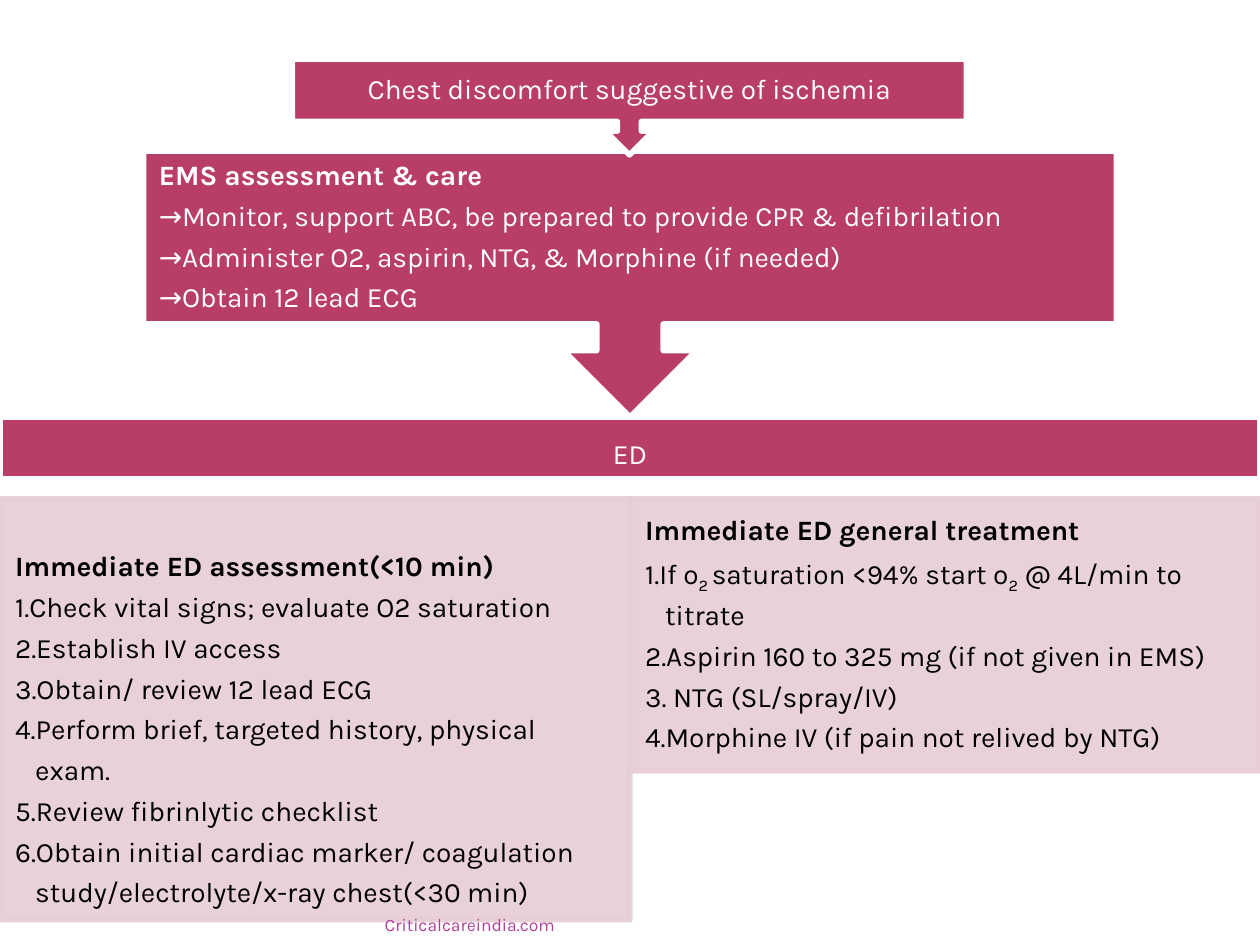
from lxml import etree
from pptx import Presentation
from pptx.dml.color import RGBColor
from pptx.enum.shapes import MSO_SHAPE
from pptx.enum.text import MSO_ANCHOR, PP_ALIGN
from pptx.oxml.ns import qn
from pptx.util import Inches, Pt

RECT = MSO_SHAPE.RECTANGLE
CALLOUT = MSO_SHAPE.UP_ARROW_CALLOUT
MIDDLE, BOTTOM = MSO_ANCHOR.MIDDLE, MSO_ANCHOR.BOTTOM
LEFT, CENTER, RIGHT = PP_ALIGN.LEFT, PP_ALIGN.CENTER, PP_ALIGN.RIGHT

ROSE, BLUSH, WHITE, BLACK, PLUM = "B83D68", "E6CED4", "FFFFFF", "000000", "B13F9A"


def paint(form, tone, clear=None):
    form.solid()
    form.fore_color.rgb = RGBColor.from_string(tone)
    if clear:
        color = form._xPr.find(qn("a:solidFill"))[0]
        etree.SubElement(color, qn("a:alpha"), val=str(clear * 1000))


class Deck:
    font = "Karla"
    size = 16

    def __init__(self, wide, high):
        self.file = Presentation()
        self.file.slide_width = Inches(wide)
        self.file.slide_height = Inches(high)
        self.slide = self.file.slides.add_slide(self.file.slide_layouts[6])

    def place(self, area):
        wide, high = self.file.slide_width, self.file.slide_height
        return [int(part * side / 100) for part, side in zip(area, (wide, high) * 2)]

    def block(self, area, kind=RECT, tone=ROSE, edge=WHITE, clear=None):
        shape = self.slide.shapes.add_shape(kind, *self.place(area))
        shape.shadow.inherit = False
        paint(shape.fill, tone, clear)
        paint(shape.line.fill, edge, clear)
        shape.line.width = Pt(3.15)
        if kind == CALLOUT:
            shape.rotation = 180

    def text(self, area, lines, tone, align=LEFT, inset=(0.12, 0.02, 0.12, 0.02),
             anchor=MIDDLE, size=size, line=0.9, after=6):
        frame = self.slide.shapes.add_textbox(*self.place(area)).text_frame
        frame.word_wrap = True
        frame.vertical_anchor = anchor
        (frame.margin_left, frame.margin_top,
         frame.margin_right, frame.margin_bottom) = map(Inches, inset)
        for rank, runs in enumerate(lines):
            para = frame.add_paragraph() if rank else frame.paragraphs[0]
            para.alignment = align
            para.line_spacing = line
            para.space_after = Pt(after if rank < len(lines) - 1 else 0)
            for words, style in [(runs, "")] if isinstance(runs, str) else runs:
                self.run(para, words, style, tone, size)

    def run(self, para, words, style, tone, size):
        run = para.add_run()
        run.text = words
        run.font.name = self.font
        run.font.size = Pt(size)
        run.font.bold = style == "bold"
        run.font.color.rgb = RGBColor.from_string(tone)
        if style == "sub":
            run.font._element.set("baseline", "-25000")
        if style == "hang":
            para._p.get_or_add_pPr().set("marL", str(Inches(0.16)))


def main():
    deck = Deck(10, 7.5)

    deck.block((0, 44.13, 100, 6.53))
    deck.text((0, 44.13, 100, 6.53), ["ED"], WHITE, CENTER, (0.12, 0.12, 0.12, 0))

    assess = [
        [("Immediate ED assessment(<10 min)", "bold")],
        "1.Check vital signs; evaluate O2 saturation",
        "2.Establish IV access",
        "3.Obtain/ review 12 lead ECG",
        "4.Perform brief, targeted history, physical",
        [("exam.", "hang")],
        "5.Review fibrinlytic checklist",
        "6.Obtain initial cardiac marker/ coagulation",
        [("study/electrolyte/x-ray chest(<30 min)", "hang")],
    ]
    treat = [
        [("Immediate ED general treatment", "bold")],
        [("1.If o", ""), ("2 ", "sub"), ("saturation <94% start o", ""),
         ("2", "sub"), (" @ 4L/min to", "")],
        [("titrate", "hang")],
        "2.Aspirin 160 to 325 mg (if not given in EMS)",
        "3. NTG (SL/spray/IV)",
        "4.Morphine IV (if pain not relived by NTG)",
    ]
    for col, (lines, high, top) in enumerate([(assess, 44.53, 0.36), (treat, 28.8, 0.02)]):
        area = (50 * col, 52.8, 50, high)
        deck.block(area, tone=BLUSH, edge=BLUSH, clear=90)
        deck.text(area, lines, BLACK, inset=(0.12, top, 0.12, 0.02))

    care = [
        [("EMS assessment & care", "bold")],
        "→Monitor, support ABC, be prepared to provide CPR & defibrilation",
        "→Administer O2, aspirin, NTG, & Morphine (if needed)",
        "→Obtain 12 lead ECG",
    ]
    start = ["Chest discomfort suggestive of ischemia"]
    for left, top, wide, high, lines, align in [
        (11.4, 16, 77.2, 28.13, care, LEFT),
        (23.2, 6.27, 53.5, 10.13, start, CENTER),
    ]:
        deck.block((left, top, wide, high), CALLOUT)
        deck.text((left, top, wide, high * 0.65), lines, WHITE, align)

    deck.text((5, 95.6, 40, 3.33), ["Criticalcareindia.com"], PLUM, RIGHT,
              (0.1, 0, 0.1, 0), BOTTOM, 10, 1, 0)
    deck.file.save("out.pptx")


if __name__ == "__main__":
    main()
